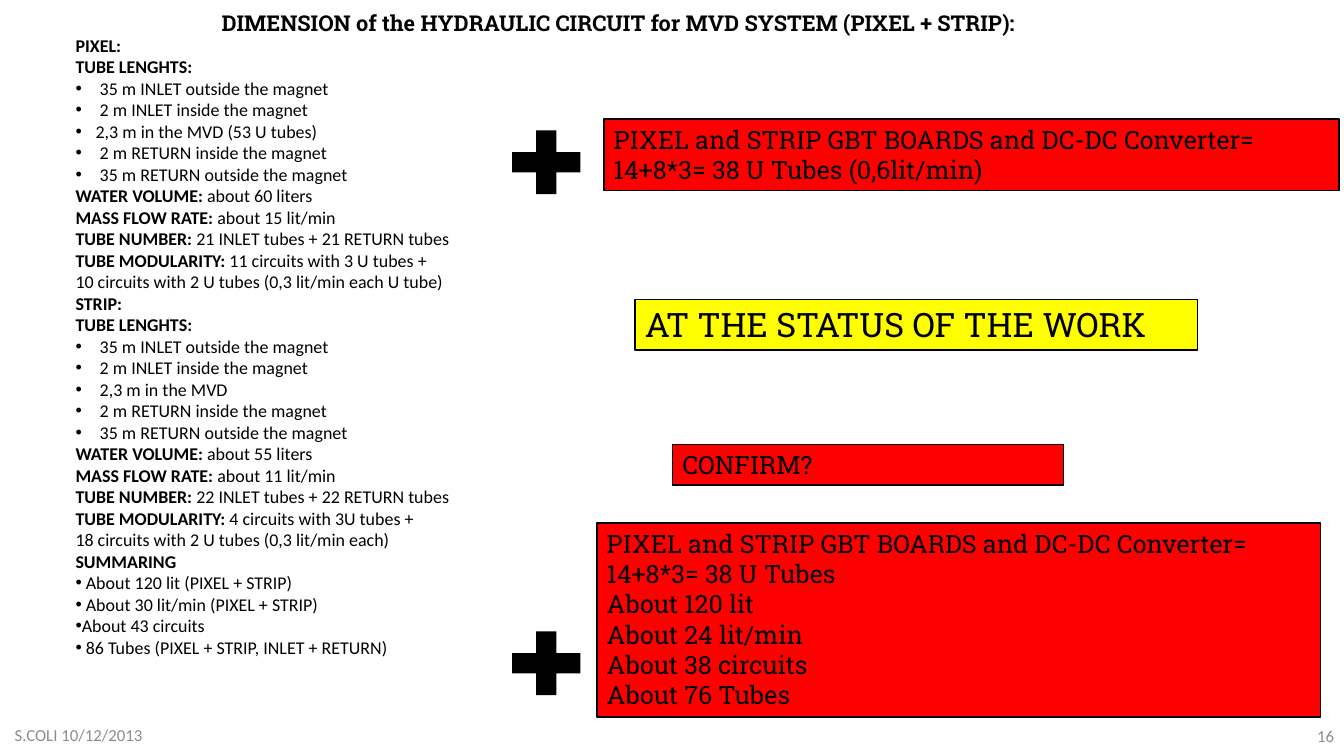
from lxml.etree import SubElement
from pptx import Presentation
from pptx.dml.color import RGBColor
from pptx.enum.shapes import MSO_SHAPE
from pptx.enum.text import MSO_ANCHOR, MSO_AUTO_SIZE, PP_ALIGN
from pptx.oxml.ns import qn
from pptx.util import Inches, Pt

SLAB, SANS = "Roboto Slab", "Calibri"
BLACK, GREY, RED, YELLOW = "000000", "8C8C8C", "FF0000", "FFFF00"

TITLE = "DIMENSION of the HYDRAULIC CIRCUIT for MVD SYSTEM (PIXEL + STRIP):"
BOARDS = "PIXEL and STRIP GBT BOARDS and DC-DC Converter="

# Each circuit line is (kind, bold label, plain text).
CIRCUIT_LINES = [
    ("plain", "PIXEL:", ""),
    ("hanging", "TUBE LENGHTS:", ""),
    ("bullet", "", " 35 m INLET outside the magnet"),
    ("bullet", "", " 2 m INLET inside the magnet"),
    ("bullet", "", "2,3 m in the MVD (53 U tubes)"),
    ("bullet", "", " 2 m RETURN inside the magnet"),
    ("bullet", "", " 35 m RETURN outside the magnet"),
    ("hanging", "WATER VOLUME: ", "about 60 liters"),
    ("hanging", "MASS FLOW RATE: ", "about 15 lit/min"),
    ("hanging", "TUBE NUMBER: ", "21 INLET tubes + 21 RETURN tubes"),
    ("hanging", "TUBE MODULARITY: ", "11 circuits with 3 U tubes +"),
    ("hanging", "", "10 circuits with 2 U tubes (0,3 lit/min each U tube)"),
    ("plain", "STRIP:", ""),
    ("hanging", "TUBE LENGHTS:", ""),
    ("bullet", "", " 35 m INLET outside the magnet"),
    ("bullet", "", " 2 m INLET inside the magnet"),
    ("bullet", "", " 2,3 m in the MVD"),
    ("bullet", "", " 2 m RETURN inside the magnet"),
    ("bullet", "", " 35 m RETURN outside the magnet"),
    ("hanging", "WATER VOLUME: ", "about 55 liters"),
    ("hanging", "MASS FLOW RATE: ", "about 11 lit/min"),
    ("hanging", "TUBE NUMBER: ", "22 INLET tubes + 22 RETURN tubes"),
    ("hanging", "TUBE MODULARITY: ", "4 circuits with 3U tubes +"),
    ("hanging", "", "18 circuits with 2 U tubes (0,3 lit/min each)"),
    ("hanging", "SUMMARING", ""),
    ("tight bullet", "", " About 120 lit (PIXEL + STRIP)"),
    ("tight bullet", "", " About 30 lit/min (PIXEL + STRIP)"),
    ("tight bullet", "", "About 43 circuits"),
    ("tight bullet", "", " 86 Tubes (PIXEL + STRIP, INLET + RETURN)"),
]

BOXES = [
    ((47.25, 39.6, 41.85, 6.67), YELLOW, 24, ["AT THE STATUS OF THE WORK"]),
    ((44.93, 15.73, 54.68, 9.47), RED, 18, [BOARDS, "14+8*3= 38 U Tubes (0,6lit/min)"]),
    ((44.4, 69.2, 53.85, 25.6), RED, 18,
     [BOARDS, "14+8*3= 38 U Tubes", "About 120 lit", "About 24 lit/min",
      "About 38 circuits", "About 76 Tubes"]),
    ((50.03, 58.8, 29.1, 5.33), RED, 18, ["CONFIRM?"]),
]
PLUS_TOPS = [15.73, 82]

presentation = Presentation()
presentation.slide_width, presentation.slide_height = Inches(13.33), Inches(7.5)
slide = presentation.slides.add_slide(presentation.slide_layouts[6])


def color(value):
    """Turn a hex string into a colour."""
    return RGBColor.from_string(value)


def place(area):
    """Turn percentages of the slide into left, top, width and height."""
    sides = (presentation.slide_width, presentation.slide_height) * 2
    return [int(side * share / 100) for side, share in zip(sides, area)]


def add_shape(kind, area, fill, line=None):
    """Add a filled preset shape with an optional outline."""
    shape = slide.shapes.add_shape(kind, *place(area))
    shape.shadow.inherit = False
    shape.fill.solid()
    shape.fill.fore_color.rgb = color(fill)
    if line:
        shape.line.color.rgb = color(line)
        shape.line.width = Pt(1.25)
    else:
        shape.line.fill.background()
    return shape


def set_indent(paragraph, kind):
    """Set the hanging indent and the bullet of a paragraph."""
    properties = paragraph._p.get_or_add_pPr()
    if kind in ("hanging", "bullet"):
        properties.set("marL", str(Inches(0.2)))
        properties.set("indent", str(-Inches(0.2)))
    if "bullet" in kind:
        SubElement(properties, qn("a:buFont")).set("typeface", "Arial")
        SubElement(properties, qn("a:buChar")).set("char", "•")


def write(shape, lines, font=SANS, size=12, ink=BLACK, align=PP_ALIGN.LEFT,
          anchor=MSO_ANCHOR.TOP, grow=False):
    """Write (kind, bold, plain) lines into a shape."""
    frame = shape.text_frame
    frame.word_wrap = True
    frame.vertical_anchor = anchor
    frame.auto_size = MSO_AUTO_SIZE.SHAPE_TO_FIT_TEXT if grow else MSO_AUTO_SIZE.NONE
    for index, (kind, *parts) in enumerate(lines):
        paragraph = frame.add_paragraph() if index else frame.paragraphs[0]
        paragraph.alignment = align
        set_indent(paragraph, kind)
        for text, bold in zip(parts, (True, False)):
            if text:
                run = paragraph.add_run()
                run.text = text
                run.font.name, run.font.size, run.font.bold = font, Pt(size), bold
                run.font.color.rgb = color(ink)


def add_text(area, lines, **style):
    """Add a text box."""
    write(slide.shapes.add_textbox(*place(area)), lines, **style)


add_text((4.88, 3.87, 33.98, 86), CIRCUIT_LINES, size=12.8, grow=True)
add_text((10.28, 0, 71.48, 6.13), [("plain", TITLE, "")], font=SLAB, size=15.6,
         align=PP_ALIGN.CENTER, anchor=MSO_ANCHOR.MIDDLE)
for area, fill, size, lines in BOXES:
    write(add_shape(MSO_SHAPE.RECTANGLE, area, fill, BLACK),
          [("plain", "", line) for line in lines], font=SLAB, size=size, grow=True)
for top in PLUS_TOPS:
    add_shape(MSO_SHAPE.MATH_PLUS, (37.2, top, 6.9, 11.47), BLACK)
for area, text, align in [
    ((0, 94.53, 11.7, 5.33), "S.COLI 10/12/2013", PP_ALIGN.CENTER),
    ((96.6, 94.67, 3.4, 5.33), "16", PP_ALIGN.RIGHT),
]:
    add_text(area, [("plain", "", text)], ink=GREY, align=align, anchor=MSO_ANCHOR.MIDDLE)

presentation.save("out.pptx")
